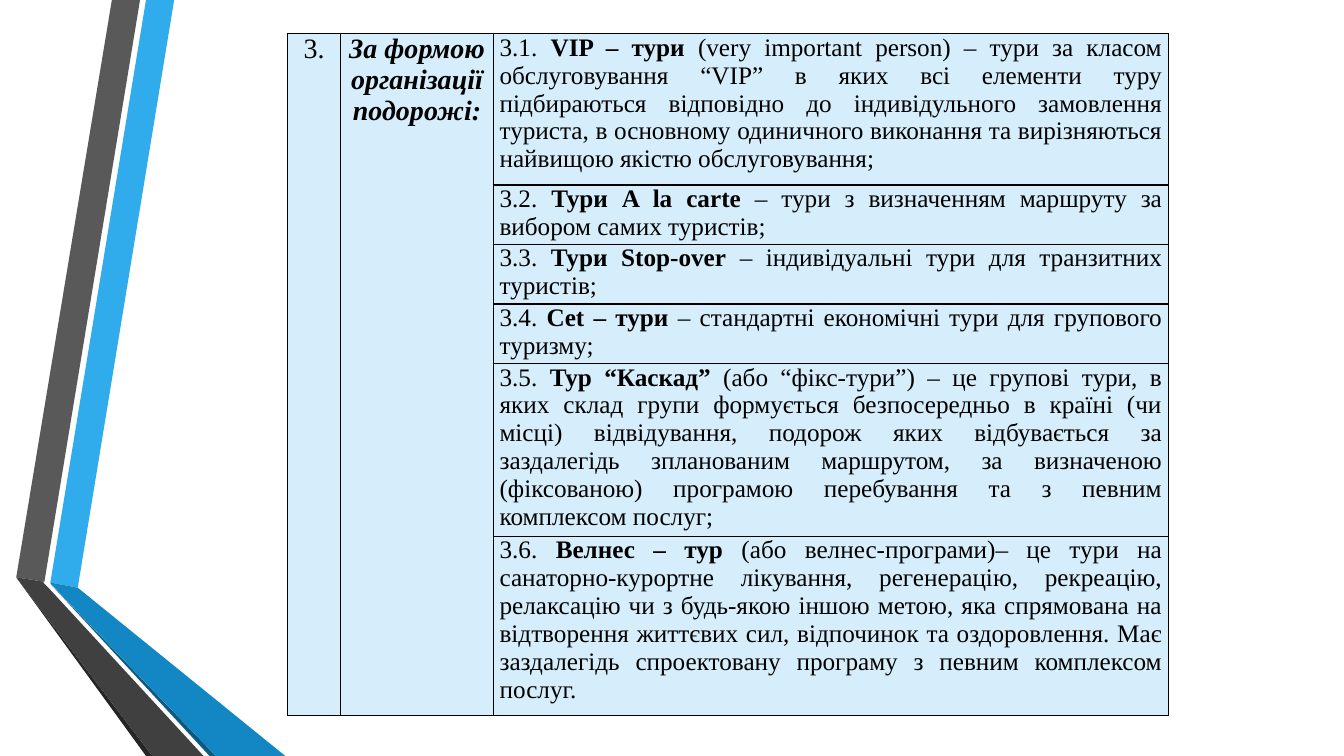
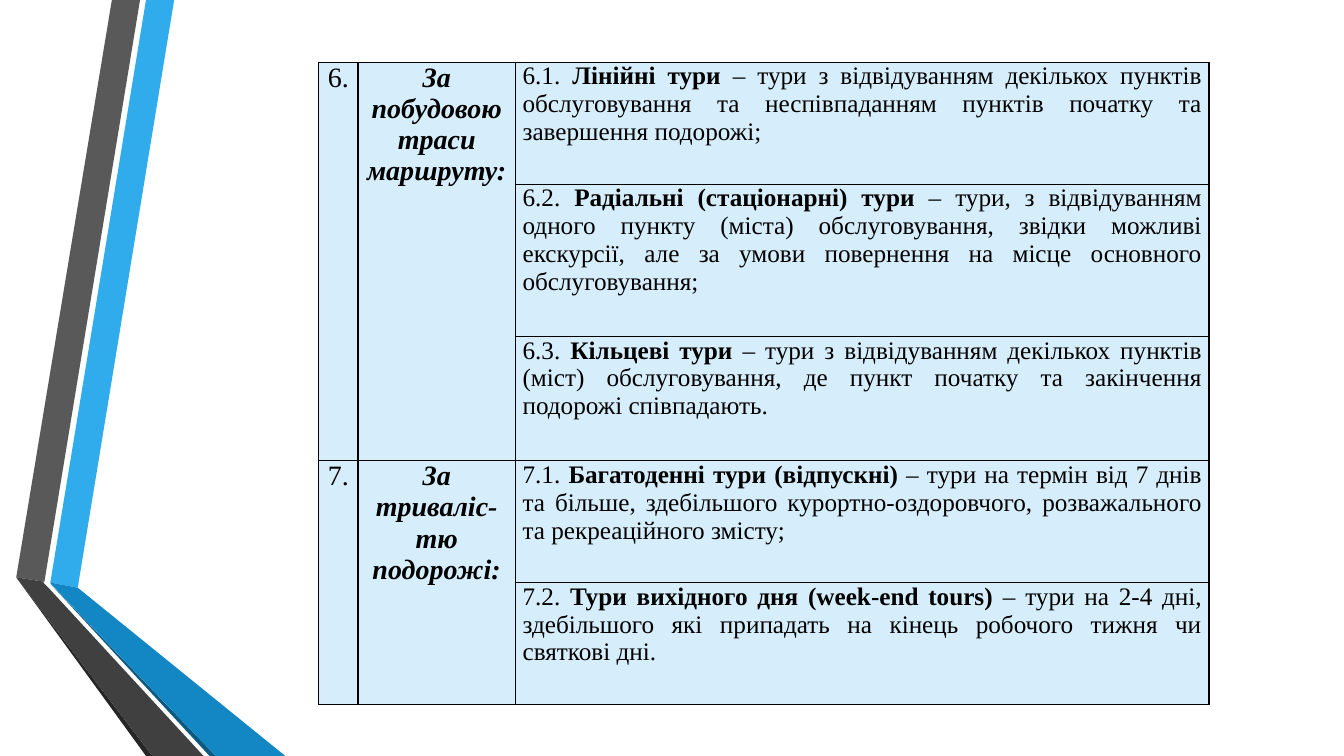
from dataclasses import dataclass

from lxml.etree import SubElement
from pptx import Presentation
from pptx.dml.color import RGBColor
from pptx.enum.text import PP_ALIGN
from pptx.oxml.ns import qn
from pptx.util import Cm, Pt

FONT = "Times New Roman"
INK = "000000"
CELL_FILL = "D6EEFB"
BORDER_WIDTH = Pt(1)
HEADING_SIZE = 20
TOUR_SIZE = 18
SLIDE_WIDTH, SLIDE_HEIGHT = 33.87, 19.05

RIBBONS = [
    ("30ACEC", [(1.27, 14.68), (1.96, 14.81), (4.39, 0), (3.68, 0)]),
    ("595959", [(3.53, 0), (2.82, 0), (0.41, 14.55), (1.12, 14.66)]),
    ("262626", [(0.41, 14.55), (3.68, SLIDE_HEIGHT), (3.84, SLIDE_HEIGHT)]),
    ("0C5A82", [(1.27, 14.71), (5.28, SLIDE_HEIGHT), (5.44, SLIDE_HEIGHT)]),
    ("1287C3", [(1.27, 14.7), (5.44, SLIDE_HEIGHT), (7.19, SLIDE_HEIGHT),
                (1.96, 14.81), (1.27, 14.68)]),
    ("404040", [(5.13, SLIDE_HEIGHT), (1.22, 14.81), (1.09, 14.68),
                (1.12, 14.66), (0.41, 14.55), (3.84, SLIDE_HEIGHT)]),
]


@dataclass
class Category:
    """One numbered way of classifying tours, with its tours."""

    number: int
    name: str
    tours: list


@dataclass
class Grid:
    """Position, columns, rows and side margin of a table, in centimetres."""

    left: float
    top: float
    columns: list
    rows: list
    margin: float


ORGANISATION = Category(3, "За формою організації подорожі:", [
    ("VIP – тури",
     " (very important person) – тури за класом обслуговування “VIP” в яких всі "
     "елементи туру підбираються відповідно до індивідульного замовлення туриста, "
     "в основному одиничного виконання та вирізняються найвищою якістю "
     "обслуговування;"),
    ("Тури A la cartе", " – тури з визначенням маршруту за вибором самих туристів;"),
    ("Тури Stop-over", " – індивідуальні тури для транзитних туристів;"),
    ("Cet – тури", " – стандартні економічні тури для групового туризму;"),
    ("Тур “Каскад”",
     " (або “фікс-тури”) – це групові тури, в яких склад групи формується "
     "безпосередньо в країні (чи місці) відвідування, подорож яких відбувається "
     "за заздалегідь зпланованим маршрутом, за визначеною (фіксованою) програмою "
     "перебування та з певним комплексом послуг;"),
    ("Велнес – тур",
     " (або велнес-програми)– це тури на санаторно-курортне лікування, "
     "регенерацію, рекреацію, релаксацію чи з будь-якою іншою метою, яка "
     "спрямована на відтворення життєвих сил, відпочинок та оздоровлення. Має "
     "заздалегідь спроектовану програму з певним комплексом послуг."),
])
ROUTE = Category(6, "За побудовою траси маршруту:", [
    ("Лінійні тури",
     " – тури з відвідуванням декількох пунктів обслуговування та неспівпаданням "
     "пунктів початку та завершення подорожі;"),
    ("Радіальні (стаціонарні) тури",
     " – тури, з відвідуванням одного пункту (міста) обслуговування, звідки "
     "можливі екскурсії, але за умови повернення на місце основного "
     "обслуговування;"),
    ("Кільцеві тури",
     " – тури з відвідуванням декількох пунктів (міст) обслуговування, де пункт "
     "початку та закінчення подорожі співпадають."),
])
DURATION = Category(7, "За триваліс-тю подорожі:", [
    ("Багатоденні тури (відпускні)",
     " – тури на термін від 7 днів та більше, здебільшого курортно-оздоровчого, "
     "розважального та рекреаційного змісту;"),
    ("Тури вихідного дня (week-end tours)",
     " – тури на 2-4 дні, здебільшого які припадать на кінець робочого тижня чи "
     "святкові дні."),
])

TOUR_SLIDES = [
    (Grid(7.24, 0.85, [1.35, 3.84, 17.02], [3.81, 1.5, 1.5, 1.5, 4.35, 4.52], 0.16),
     [ORGANISATION]),
    (Grid(8.03, 1.57, [0.99, 3.97, 17.48], [3.07, 3.84, 3.12, 3.07, 3.07], 0.18),
     [ROUTE, DURATION]),
]


def colour(code):
    """Turn a hex string into a colour."""
    return RGBColor.from_string(code)


def prepare_layout(deck):
    """Return the blank layout, carrying only the decorative ribbons."""
    layout = deck.slide_layouts[6]
    for placeholder in list(layout.placeholders):
        layout.shapes.element.remove(placeholder.element)
    return layout


def draw_ribbons(slide, layout):
    """Draw the folded ribbons and hand them to the layout."""
    for fill, corners in RIBBONS:
        points = [(Cm(x), Cm(y)) for x, y in corners]
        outline = slide.shapes.build_freeform(*points[0])
        outline.add_line_segments(points[1:], close=True)
        ribbon = outline.convert_to_shape()
        ribbon.shadow.inherit = False
        ribbon.fill.solid()
        ribbon.fill.fore_color.rgb = colour(fill)
        ribbon.line.fill.background()
        layout.shapes.element.append(ribbon.element)


def style_cell(cell, margin):
    """Give a cell its fill, margins and black borders."""
    cell.margin_left = cell.margin_right = Cm(margin)
    cell.margin_top = cell.margin_bottom = 0
    cell.fill.solid()
    cell.fill.fore_color.rgb = colour(CELL_FILL)
    properties = cell._tc.get_or_add_tcPr()
    for position, side in enumerate(("lnL", "lnR", "lnT", "lnB")):
        border = SubElement(properties, qn(f"a:{side}"), w=str(BORDER_WIDTH))
        paint = SubElement(border, qn("a:solidFill"))
        SubElement(paint, qn("a:srgbClr"), val=INK)
        properties.insert(position, border)


def write(cell, alignment, size, pieces):
    """Fill a cell with runs given as text, bold and italic."""
    paragraph = cell.text_frame.paragraphs[0]
    paragraph.alignment = alignment
    for text, bold, italic in pieces:
        run = paragraph.add_run()
        run.text = text
        run.font.name = FONT
        run.font.size = Pt(size)
        run.font.bold = bold
        run.font.italic = italic
        run.font.color.rgb = colour(INK)


def fill_category(table, first, category):
    """Write one category into the table from its first row on."""
    last = first + len(category.tours) - 1
    for column in (0, 1):
        table.cell(first, column).merge(table.cell(last, column))
    write(table.cell(first, 0), PP_ALIGN.CENTER, HEADING_SIZE,
          [(f"{category.number}.", False, False)])
    write(table.cell(first, 1), PP_ALIGN.CENTER, HEADING_SIZE,
          [(category.name, True, True)])
    for index, (term, definition) in enumerate(category.tours):
        write(table.cell(first + index, 2), PP_ALIGN.JUSTIFY, TOUR_SIZE, [
            (f"{category.number}.{index + 1}. ", False, False),
            (term, True, False),
            (definition, False, False),
        ])


def add_tour_table(slide, grid, categories):
    """Place the table of tour categories on a slide."""
    table = slide.shapes.add_table(
        len(grid.rows), len(grid.columns), Cm(grid.left), Cm(grid.top),
        Cm(sum(grid.columns)), Cm(sum(grid.rows))).table
    table.first_row = table.horz_banding = False
    for column, width in zip(table.columns, grid.columns):
        column.width = Cm(width)
    for row, height in zip(table.rows, grid.rows):
        row.height = Cm(height)
    for cell in table.iter_cells():
        style_cell(cell, grid.margin)
    first = 0
    for category in categories:
        fill_category(table, first, category)
        first += len(category.tours)


def main():
    """Build and save the deck."""
    deck = Presentation()
    deck.slide_width, deck.slide_height = Cm(SLIDE_WIDTH), Cm(SLIDE_HEIGHT)
    layout = prepare_layout(deck)
    slides = [deck.slides.add_slide(layout) for _ in TOUR_SLIDES]
    draw_ribbons(slides[0], layout)
    for slide, (grid, categories) in zip(slides, TOUR_SLIDES):
        add_tour_table(slide, grid, categories)
    deck.save("out.pptx")


if __name__ == "__main__":
    main()
